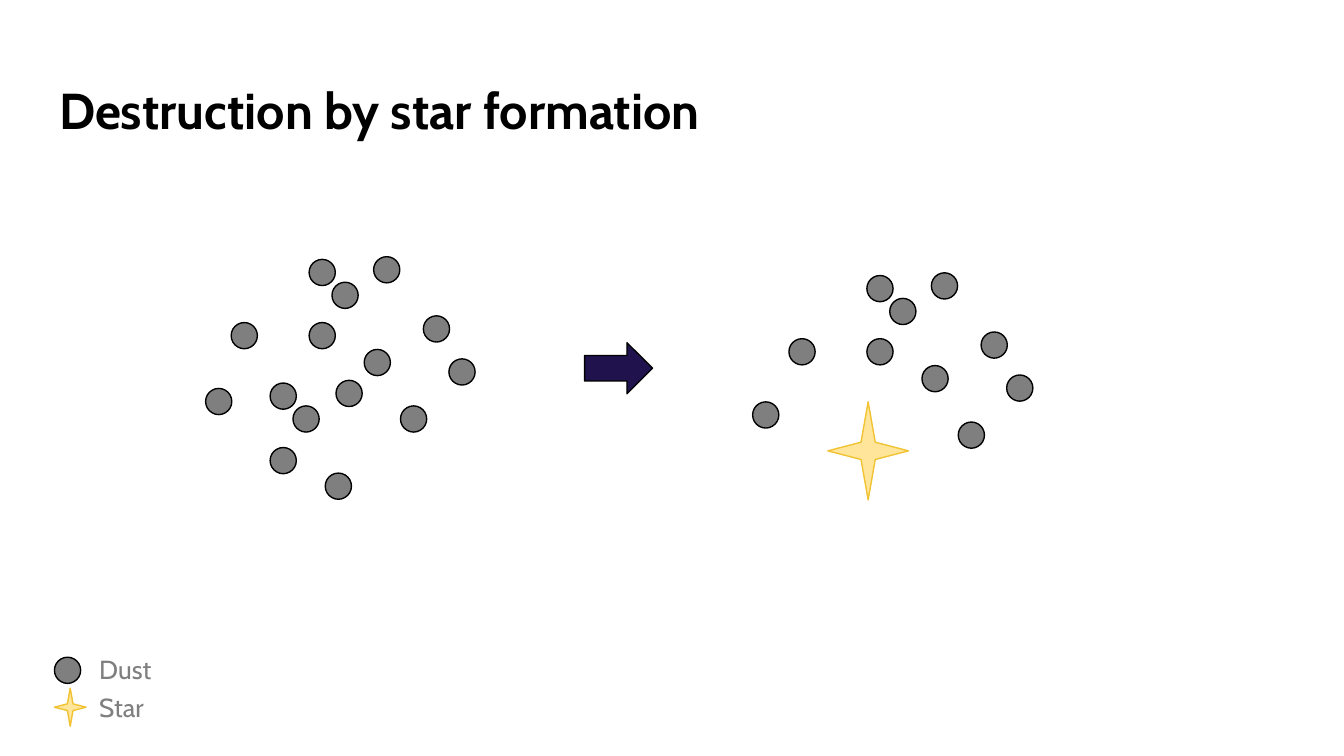
from pptx import Presentation
from pptx.dml.color import RGBColor
from pptx.enum.shapes import MSO_SHAPE
from pptx.enum.text import MSO_ANCHOR
from pptx.util import Inches, Pt

ELLIPSE = MSO_SHAPE.OVAL
ARROW = MSO_SHAPE.RIGHT_ARROW
STAR = MSO_SHAPE.STAR_4_POINT
TOP = MSO_ANCHOR.TOP

THEME = {
    "font": "Cabin",
    "title": {"size": Pt(27), "bold": True, "color": "000000"},
    "label": {"size": Pt(14), "bold": False, "color": "7F7F7F"},
    "dust": {"fill": "7F7F7F", "line": "000000"},
    "arrow": {"fill": "20124D", "line": "000000"},
    "star": {"fill": "FFE599", "line": "F1C232"},
    "line_width": Pt(0.75),
}

deck = Presentation()
deck.slide_width = Inches(10)
deck.slide_height = deck.slide_width * 9 // 16
page = deck.slides.add_slide(deck.slide_layouts[6])

# The page is a grid of 100 columns by 56.25 rows; all places are in grid units.
COLUMN = deck.slide_width / 100
ROW = deck.slide_height / 56.25
DUST_SIZE = 1.95


def add_figure(kind, style, left, top, width, height):
    figure = page.shapes.add_shape(
        kind, round(left * COLUMN), round(top * ROW),
        round(width * COLUMN), round(height * ROW))
    figure.shadow.inherit = False
    figure.fill.solid()
    figure.fill.fore_color.rgb = RGBColor.from_string(THEME[style]["fill"])
    figure.line.color.rgb = RGBColor.from_string(THEME[style]["line"])
    figure.line.width = THEME["line_width"]
    if kind == STAR:
        figure.adjustments[0] = 0.125


def add_text(words, style, left, top, width, height):
    box = page.shapes.add_textbox(
        round(left * COLUMN), round(top * ROW),
        round(width * COLUMN), round(height * ROW))
    frame_format = {"word_wrap": True, "vertical_anchor": TOP}
    for side in ("left", "right", "top", "bottom"):
        frame_format[f"margin_{side}"] = Inches(0.1)
    for name, value in frame_format.items():
        setattr(box.text_frame, name, value)
    span = box.text_frame.paragraphs[0].add_run()
    span.text = words
    font_format = {"name": THEME["font"], "size": THEME[style]["size"],
                   "bold": THEME[style]["bold"]}
    for name, value in font_format.items():
        setattr(span.font, name, value)
    span.font.color.rgb = RGBColor.from_string(THEME[style]["color"])


add_text("Destruction by star formation", "title", 3.41, 4.9, 93.2, 6.8)

# Dust that survives shows on both sides; the rest goes into the star.
surviving = [(17.2, 24), (27.8, 19.1), (23, 19.3), (31.5, 23.5), (23, 24),
             (24.7, 21), (27.1, 26), (33.4, 26.7), (29.8, 30.2)]
consumed = [(25, 28.3), (20.1, 28.5), (20.1, 33.3), (21.8, 30.2), (24.2, 35.2)]
before = surviving + [(15.3, 28.9)] + consumed
after = [(left + 41.5, top + 1.2) for left, top in surviving] + [(56, 29.9)]
for left, top in before + after:
    add_figure(ELLIPSE, "dust", left, top, DUST_SIZE, DUST_SIZE)

add_figure(ARROW, "arrow", 43.5, 25.5, 5.05, 3.8)
add_figure(STAR, "star", 61.6, 29.9, 6, 7.3)

legend = [
    ("Dust", "dust", ELLIPSE, 48.9, DUST_SIZE, DUST_SIZE),
    ("Star", "star", STAR, 51.2, 2.35, 2.85),
]
for index, (words, style, kind, top, width, height) in enumerate(legend):
    add_text(words, "label", 6.4, 47.6 + index * 2.85, 38.7, 4.4)
    add_figure(kind, style, 4.05, top, width, height)

deck.save("out.pptx")
